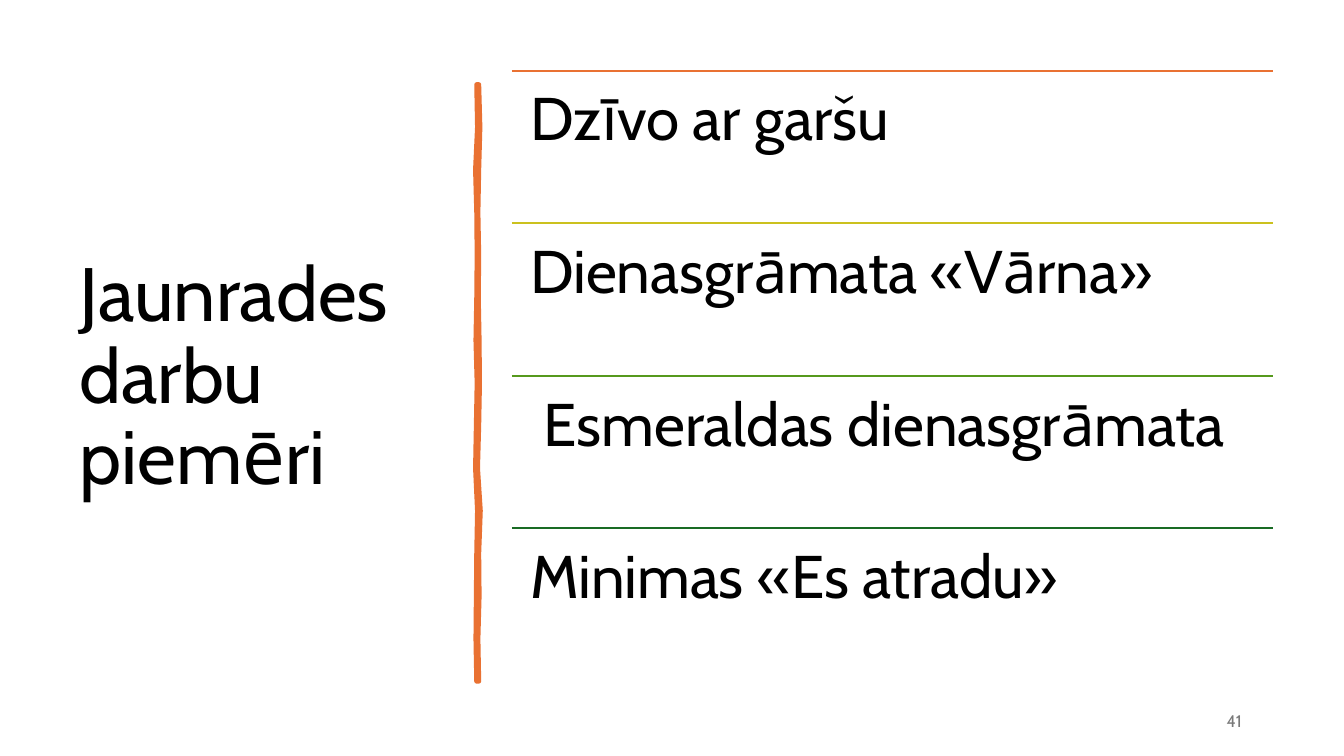
from dataclasses import dataclass
from lxml.etree import SubElement
from pptx import Presentation
from pptx.dml.color import RGBColor as RGB
from pptx.enum.shapes import MSO_CONNECTOR as Link
from pptx.enum.text import MSO_ANCHOR as Anchor, MSO_AUTO_SIZE as Fit, PP_ALIGN as Align
from pptx.oxml.ns import qn
from pptx.util import Cm, Pt


@dataclass(frozen=True)
class Theme:
    """Hold the colours and type sizes of the slide."""
    font: str = "Cabin"
    ink: str = "000000"
    grey: str = "797979"
    brush: str = "E97132"
    rules: tuple = ("E97132", "CBC11E", "56991D", "196B24")
    title: int = 54
    item: int = 43
    page: int = 12


THEME = Theme()
ITEMS = ("Dzīvo ar garšu", "Dienasgrāmata «Vārna»",
         " Esmeraldas dienasgrāmata", "Minimas «Es atradu»")
RIGHT = (0.03, 0.06, 0.03, 0.01, 0.03, 0.02, 0.04, 0.05, 0.03, 0.0, 0.07, 0.03, 0.04, 0.01, 0.03)
LEFT = (-0.03, -0.01, -0.06, -0.03, -0.02, -0.03, -0.05, -0.02, -0.04, -0.06, -0.01, -0.03, -0.04, -0.05, -0.03)


def write(shape, text, size, color, anchor, align=Align.LEFT, lead=0.9, inset=None):
    """Set one styled paragraph in a shape."""
    frame = shape.text_frame
    frame.word_wrap = True
    frame.auto_size = Fit.NONE
    frame.vertical_anchor = anchor
    if inset is not None:
        frame.margin_left = frame.margin_right = inset
        frame.margin_top = frame.margin_bottom = inset
    frame.text = text
    para = frame.paragraphs[0]
    para.alignment = align
    para.line_spacing = lead
    para.font.name = THEME.font
    para.font.size = Pt(size)
    para.font.color.rgb = RGB.from_string(color)


def head(slide, left, top, width, height):
    """Place the title in its box."""
    title = slide.shapes.title
    title.left, title.top, title.width, title.height = left, top, width, height
    write(title, "Jaunrades darbu piemēri", THEME.title, THEME.ink, Anchor.MIDDLE)


def brush(slide, mid, top, height):
    """Draw the wavy upright stroke around its middle line."""
    step = height / (len(RIGHT) - 1)
    down = [(mid + Cm(dx), top + round(i * step)) for i, dx in enumerate(RIGHT)]
    up = [(mid + Cm(dx), top + round(i * step)) for i, dx in enumerate(LEFT)][::-1]
    pen = slide.shapes.build_freeform(*down[0])
    pen.add_line_segments(down[1:] + up, close=True)
    stroke = pen.convert_to_shape()
    stroke.shadow.inherit = False
    color = RGB.from_string(THEME.brush)
    stroke.fill.solid()
    stroke.fill.fore_color.rgb = color
    stroke.line.color.rgb = color
    stroke.line.width = Pt(3.25)


def listing(slide, left, top, width, height):
    """Stack the items in equal rows, each under a coloured rule."""
    row = height // len(ITEMS)
    for i, (text, color) in enumerate(zip(ITEMS, THEME.rules)):
        y = top + i * row
        rule = slide.shapes.add_connector(Link.STRAIGHT, left, y, left + width, y)
        rule.line.color.rgb = RGB.from_string(color)
        rule.line.width = Pt(1.5)
        SubElement(rule._element.spPr, qn("a:effectLst"))
        box = slide.shapes.add_textbox(left, y, width, row)
        write(box, text, THEME.item, THEME.ink, Anchor.TOP, inset=Cm(0.46))


def page(slide, left, top, width, height):
    """Place the page number at the right of its box."""
    box = slide.shapes.add_textbox(left, top, width, height)
    write(box, "41", THEME.page, THEME.grey, Anchor.MIDDLE, Align.RIGHT, 1.0)
    box.text_frame.paragraphs[0].space_after = Pt(6)


def main():
    """Build and save the slide."""
    deck = Presentation()
    deck.slide_width, deck.slide_height = Cm(33.87), Cm(19.05)
    slide = deck.slides.add_slide(deck.slide_layouts[5])
    head(slide, Cm(1.75), Cm(1.78), Cm(9.5), Cm(15.52))
    brush(slide, Cm(12.04), Cm(2.13), Cm(15.04))
    page(slide, Cm(23.93), Cm(17.65), Cm(7.62), Cm(1.02))
    listing(slide, Cm(12.9), Cm(1.78), Cm(19.18), Cm(15.38))
    deck.save("out.pptx")


if __name__ == "__main__":
    main()
